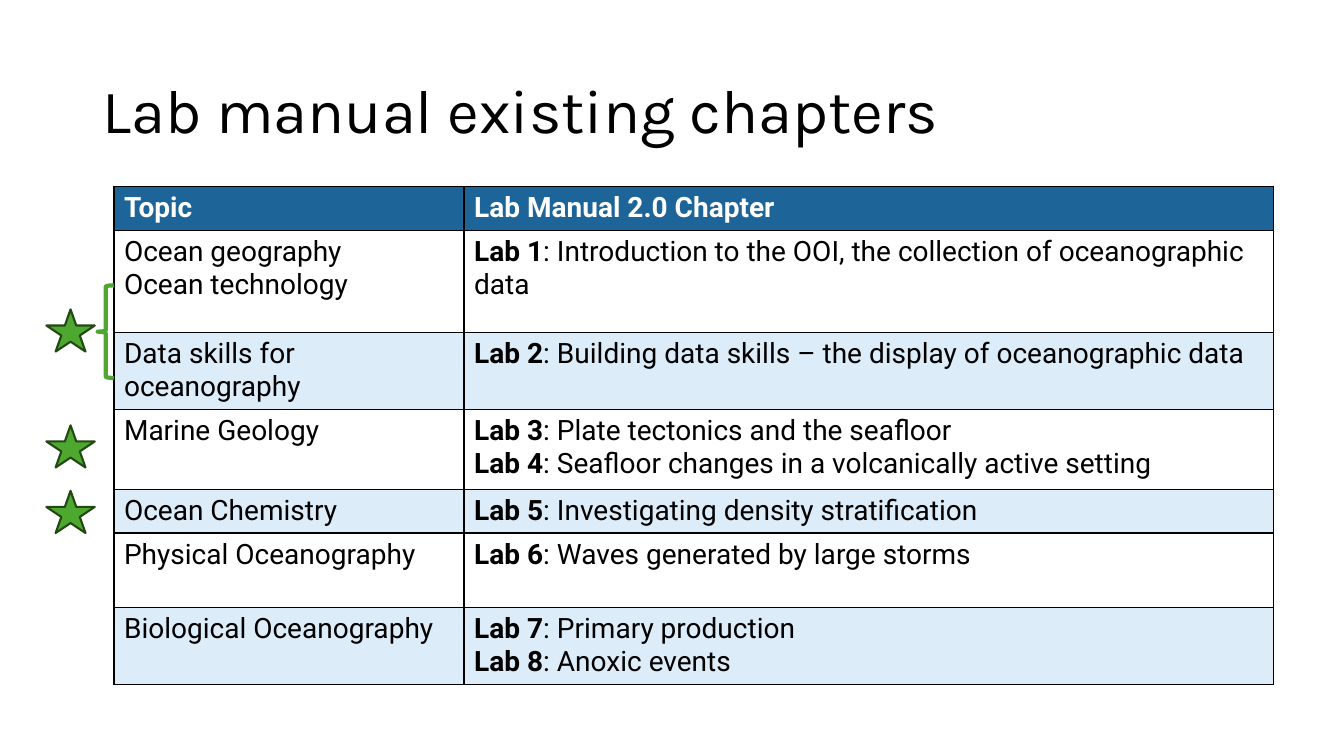
import pptx
import pptx.util
import pptx.dml.color
import pptx.enum.shapes
import pptx.enum.text
import pptx.oxml
import pptx.oxml.ns

Pt = pptx.util.Pt
RGBColor = pptx.dml.color.RGBColor
Shape = pptx.enum.shapes.MSO_SHAPE

BLACK = RGBColor(0x00, 0x00, 0x00)
WHITE = RGBColor(0xFF, 0xFF, 0xFF)
HEADER_BLUE = RGBColor(0x1D, 0x64, 0x98)
BAND_BLUE = RGBColor(0xDC, 0xEC, 0xF8)
GREEN = RGBColor(0x4E, 0xA7, 0x2E)
DARK_GREEN = RGBColor(0x22, 0x49, 0x14)

COLUMN_SHARES = (0.302, 0.698)
HEADER = ("Topic", "Lab Manual 2.0 Chapter")
CHAPTERS = [
    ("Ocean geography\nOcean technology",
     "Lab 1: Introduction to the OOI, the collection of oceanographic data", 72.9),
    ("Data skills for oceanography",
     "Lab 2: Building data skills – the display of oceanographic data", 54.2),
    ("Marine Geology",
     "Lab 3: Plate tectonics and the seafloor\n"
     "Lab 4: Seafloor changes in a volcanically active setting", 57),
    ("Ocean Chemistry", "Lab 5: Investigating density stratification", 30.8),
    ("Physical Oceanography", "Lab 6: Waves generated by large storms", 53),
    ("Biological Oceanography", "Lab 7: Primary production\nLab 8: Anoxic events", 54.6),
]
HEADER_HEIGHT = 30.8
STAR_TOPS = (37.4, 120.2, 167)


def style_span(span, font_name, size, color, bold=False):
    span.font.name = font_name
    span.font.size = Pt(size)
    span.font.color.rgb = color
    span.font.bold = bold


def add_title(page, left, top, width, height):
    box = page.shapes.add_textbox(Pt(left), Pt(top), Pt(width), Pt(height))
    frame = box.text_frame
    frame.word_wrap = True
    frame.vertical_anchor = pptx.enum.text.MSO_ANCHOR.MIDDLE
    frame.text = "Lab manual existing chapters"
    para = frame.paragraphs[0]
    para.line_spacing = 0.9
    style_span(para.runs[0], "Karla", 44, BLACK)


def draw_borders(cell):
    properties = cell._tc.get_or_add_tcPr()
    for side in ("lnL", "lnR", "lnT", "lnB"):
        properties.append(pptx.oxml.parse_xml(
            f'<a:{side} {pptx.oxml.ns.nsdecls("a")} w="12700"><a:solidFill>'
            f'<a:srgbClr val="{BLACK}"/></a:solidFill></a:{side}>'))


def fill_cell(cell, text, fill, color, all_bold):
    draw_borders(cell)
    cell.fill.solid()
    cell.fill.fore_color.rgb = fill
    cell.text_frame.text = text
    for para in cell.text_frame.paragraphs:
        label, colon, rest = para.text.partition(":")
        para.text = label
        style_span(para.runs[0], "Roboto", 20, color, all_bold or bool(colon))
        if colon:
            span = para.add_run()
            span.text = colon + rest
            style_span(span, "Roboto", 20, color)


def add_chapter_table(page, left, top, width):
    rows = [(*HEADER, HEADER_HEIGHT), *CHAPTERS]
    height = sum(row[-1] for row in rows)
    table = page.shapes.add_table(
        len(rows), len(HEADER), Pt(left), Pt(top), Pt(width), Pt(height)).table
    table.horz_banding = False
    for column, share in zip(table.columns, COLUMN_SHARES):
        column.width = Pt(width * share)
    for index, (topic, chapter, row_height) in enumerate(rows):
        table.rows[index].height = Pt(row_height)
        is_header = index == 0
        fill = HEADER_BLUE if is_header else (BAND_BLUE, WHITE)[index % 2]
        color = WHITE if is_header else BLACK
        for column, text in enumerate((topic, chapter)):
            fill_cell(table.cell(index, column), text, fill, color, is_header)


def add_marker(page, kind, left, top, width, height, line_color, line_width):
    marker = page.shapes.add_shape(kind, Pt(left), Pt(top), Pt(width), Pt(height))
    marker.shadow.inherit = False
    marker.fill.background()
    marker.line.color.rgb = line_color
    marker.line.width = Pt(line_width)
    return marker


def add_highlights(page, left, top):
    for star_top in STAR_TOPS:
        star = add_marker(page, Shape.STAR_5_POINT, left, top + star_top,
                          34.6, 30.2, DARK_GREEN, 1.5)
        star.fill.solid()
        star.fill.fore_color.rgb = GREEN
    add_marker(page, Shape.LEFT_BRACE, left + 36.7, top + 20.2, 11.5, 66.2, GREEN, 3)


def main():
    deck = pptx.Presentation()
    deck.slide_width, deck.slide_height = Pt(960), Pt(540)
    page = deck.slides.add_slide(deck.slide_layouts[6])
    add_title(page, 66.2, 28.8, 828, 104.4)
    add_chapter_table(page, 81.4, 133.2, 828)
    add_highlights(page, 33.1, 183.6)
    deck.save("out.pptx")


if __name__ == "__main__":
    main()
